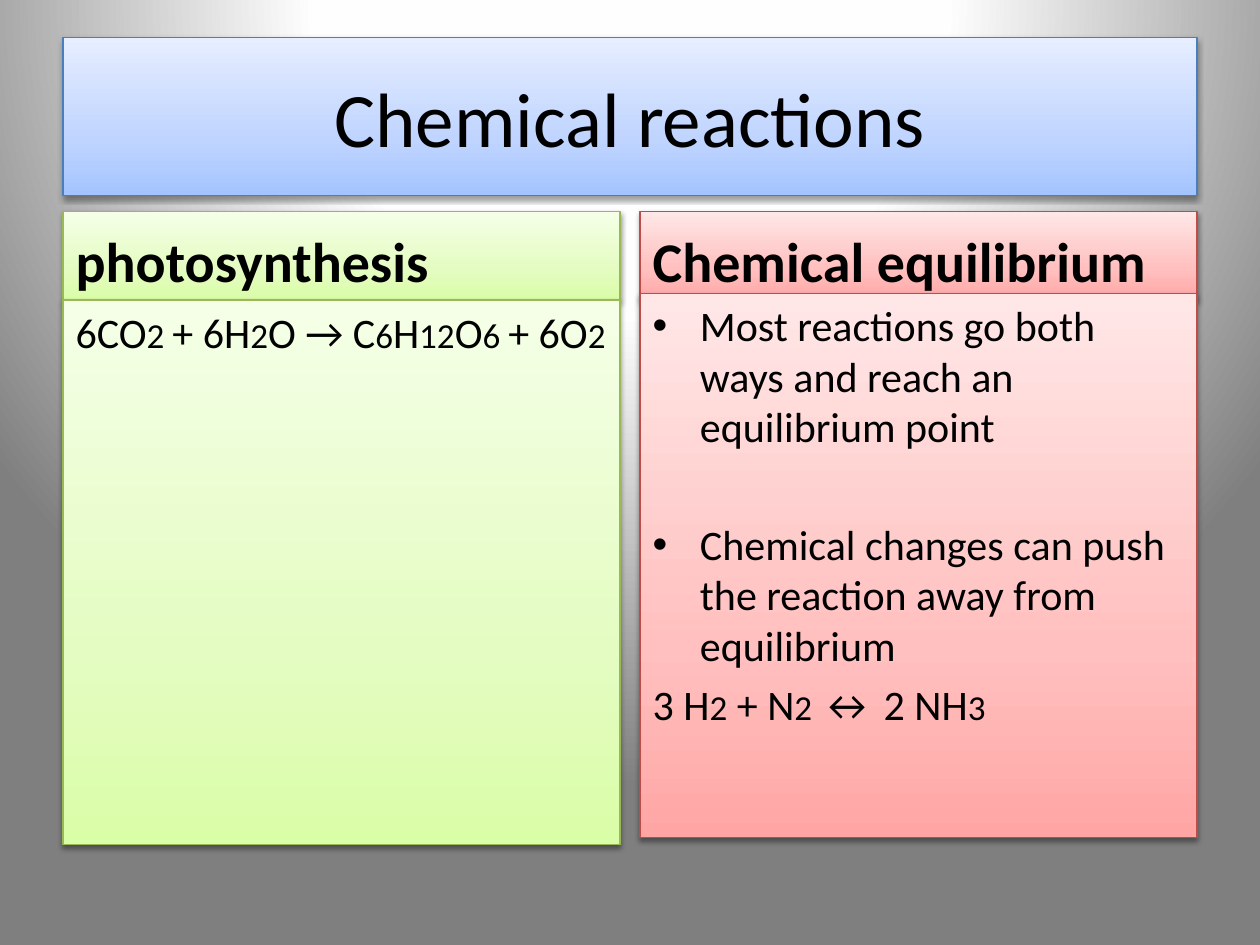
import lxml.etree
import pptx
import pptx.dml.color
import pptx.enum.text
import pptx.oxml
import pptx.oxml.ns
import pptx.util

MARGIN, COLUMN_WIDTH, GAP = 0.5, 4.42, 0.16
HEADING_TOP, HEADING_HEIGHT, BODY_HEIGHT = 1.68, 0.7, 4.32
BLUE = ("A4C4FF", "BFD4FF", "E6EEFF", "4B7EBC")
GREEN = ("DAFDA7", "E4FCC2", "F5FFE7", "98B955")
RED = ("FFA6A5", "FFC0BF", "FFE7E7", "BF4C48")
LINEAR = '<a:lin ang="5400000" scaled="0"/>'
CIRCLE = ('<a:path path="circle"><a:fillToRect l="50000" t="-80000" '
          'r="50000" b="180000"/></a:path>')


def color(hex_text):
    """Turn a hex string into a colour."""
    return pptx.dml.color.RGBColor.from_string(hex_text)


def parse_drawing(xml):
    """Make a drawing element from XML that uses the a: prefix."""
    head, mark, tail = xml.partition(">")
    slash = "/" if head.endswith("/") else ""
    return pptx.oxml.parse_xml(
        head.rstrip("/") + " " + pptx.oxml.ns.nsdecls("a") + slash + mark + tail)


def set_gradient(fill, parent, stops, direction):
    """Give a fill any number of stops, as (percent, hex) pairs."""
    fill.gradient()
    gradient = parent.find(pptx.oxml.ns.qn("a:gradFill"))
    for child in list(gradient):
        gradient.remove(child)
    stop_xml = "".join(
        f'<a:gs pos="{percent * 1000}"><a:srgbClr val="{hex_text}"/></a:gs>'
        for percent, hex_text in stops)
    gradient.append(parse_drawing(f"<a:gsLst>{stop_xml}</a:gsLst>"))
    gradient.append(parse_drawing(direction))


def style_panel(shape, left, top, width, height, palette):
    """Place a placeholder and give it gradient, outline and shadow."""
    shape.left, shape.top, shape.width, shape.height = (
        pptx.util.Inches(length) for length in (left, top, width, height))
    properties = shape.element.spPr
    bottom, middle, upper, outline = palette
    stops = ((0, upper), (65, middle), (100, bottom))
    set_gradient(shape.fill, properties, stops, LINEAR)
    shape.line.color.rgb = color(outline)
    shape.line.width = pptx.util.Pt(0.75)
    shape.shadow.inherit = False
    effects = properties.find(pptx.oxml.ns.qn("a:effectLst"))
    effects.append(parse_drawing(
        '<a:outerShdw blurRad="40000" dist="20000" dir="5400000" rotWithShape="0">'
        '<a:srgbClr val="000000"><a:alpha val="38000"/></a:srgbClr></a:outerShdw>'))


def write_text(paragraph, text, size=24, small=20, bold=False, bullet=True,
               space_before=None, align=None):
    """Write text whose parts between bars alternate normal and small size."""
    for index, part in enumerate(text.split("|")):
        if part:
            run = paragraph.add_run()
            run.text = part
            run.font.name = "Calibri"
            run.font.size = pptx.util.Pt(small if index % 2 else size)
            run.font.bold = bold
            run.font.color.rgb = color("000000")
    if space_before is not None:
        paragraph.space_before = pptx.util.Pt(space_before)
    if align is not None:
        paragraph.alignment = align
    if not bullet:
        properties = paragraph._p.get_or_add_pPr()
        properties.set("marL", "0")
        properties.set("indent", "0")
        lxml.etree.SubElement(properties, pptx.oxml.ns.qn("a:buNone"))


def fill_column(slide, column, palette, heading, body_top, lines):
    """Fill the heading and body placeholders of one column."""
    left = MARGIN + column * (COLUMN_WIDTH + GAP)
    title_shape, body_shape = (
        slide.placeholders[1 + 2 * column + offset] for offset in (0, 1))
    style_panel(title_shape, left, HEADING_TOP, COLUMN_WIDTH, HEADING_HEIGHT, palette)
    write_text(title_shape.text_frame.paragraphs[0], heading,
               size=32, bold=True, bullet=False)
    style_panel(body_shape, left, body_top, COLUMN_WIDTH, BODY_HEIGHT, palette)
    frame = body_shape.text_frame
    for index, (text, options) in enumerate(lines):
        paragraph = frame.add_paragraph() if index else frame.paragraphs[0]
        write_text(paragraph, text, **options)


def main():
    """Build the slide and save it."""
    presentation = pptx.Presentation()
    presentation.slide_width = pptx.util.Inches(10)
    presentation.slide_height = pptx.util.Inches(7.5)
    slide = presentation.slides.add_slide(
        presentation.slide_layouts.get_by_name("Comparison"))
    background = slide.background.fill
    set_gradient(background, slide.element.find(".//" + pptx.oxml.ns.qn("p:bgPr")),
                 ((0, "FFFFFF"), (40, "FEFEFE"), (100, "7F7F7F")), CIRCLE)

    title = slide.shapes.title
    style_panel(title, MARGIN, 0.3, 2 * COLUMN_WIDTH + GAP, 1.25, BLUE)
    title.text_frame.vertical_anchor = pptx.enum.text.MSO_ANCHOR.MIDDLE
    write_text(title.text_frame.paragraphs[0], "Chemical reactions", size=44,
               bullet=False, align=pptx.enum.text.PP_ALIGN.CENTER)

    fill_column(slide, 0, GREEN, "photosynthesis", 2.38, [
        ("6CO|2 |+ 6H|2|O → C|6|H|12|O|6 |+ 6O|2", {"bullet": False})])
    fill_column(slide, 1, RED, "Chemical equilibrium", 2.33, [
        ("Most reactions go both ways and reach an equilibrium point", {}),
        ("Chemical changes can push the reaction away from equilibrium",
         {"space_before": 38.5}),
        ("3 H|2| + N|2 |↔ 2 NH|3", {"bullet": False})])
    presentation.save("out.pptx")


if __name__ == "__main__":
    main()
